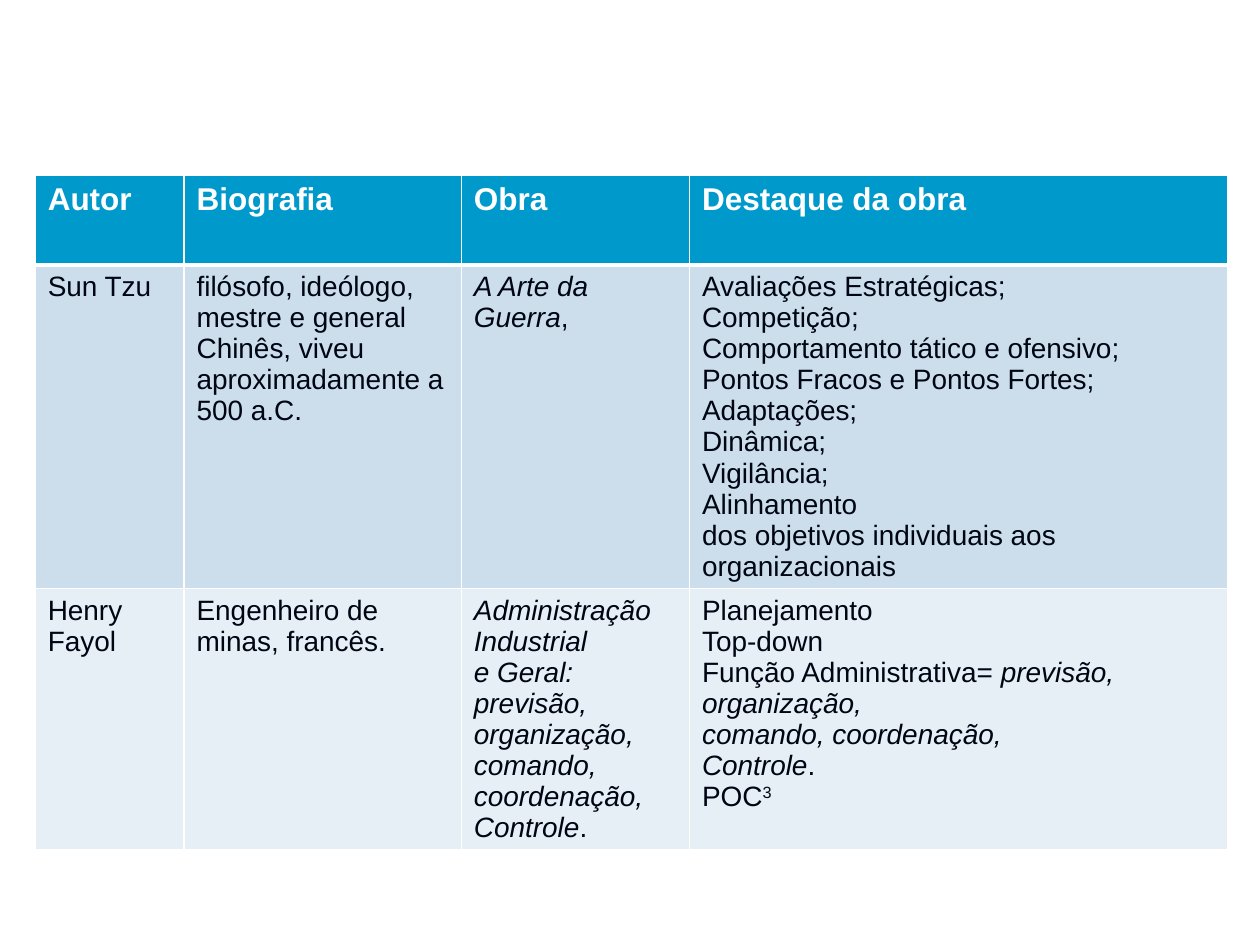
"""Builds a slide with a table of authors, their biographies and their works."""
from dataclasses import dataclass

import pptx
import pptx.dml.color
import pptx.oxml
import pptx.oxml.ns
import pptx.util

Cm = pptx.util.Cm
Pt = pptx.util.Pt
FONT = "Arial"
WHITE = "FFFFFF"
COLUMN_WIDTHS = [3.0, 5.59, 4.6, 10.86]


@dataclass(frozen=True)
class Span:
    text: str
    italic: bool = False
    baseline: int = 0


@dataclass(frozen=True)
class Row:
    height: float
    fill: str
    color: str
    size: int
    bold: bool
    bottom_border: int
    cells: list[list[list[Span]]]


def plain(*lines: str) -> list[list[Span]]:
    return [[Span(line)] for line in lines]


def italic(*lines: str) -> list[list[Span]]:
    return [[Span(line, italic=True)] for line in lines]


CONTROL_LINE = [Span("Controle", italic=True), Span(".")]
ROWS = [
    Row(1.8, "0099CC", WHITE, 18, True, 3, [
        plain("Autor"), plain("Biografia"), plain("Obra"), plain("Destaque da obra"),
    ]),
    Row(6.5, "CCDEEC", "000514", 16, False, 1, [
        plain("Sun Tzu"),
        plain("filósofo, ideólogo, mestre e general Chinês, viveu",
              "aproximadamente a 500 a.C."),
        [[Span("A Arte da Guerra", italic=True), Span(",")]],
        plain("Avaliações Estratégicas;", "Competição;",
              "Comportamento tático e ofensivo;", "Pontos Fracos e Pontos Fortes;",
              "Adaptações;", "Dinâmica;", "Vigilância;", "Alinhamento",
              "dos objetivos individuais aos organizacionais"),
    ]),
    Row(5.25, "E7EFF6", "000514", 16, False, 1, [
        plain("Henry Fayol"),
        plain("Engenheiro de minas, francês."),
        [*italic("Administração Industrial", "e Geral: previsão, organização,",
                 "comando, coordenação,"), CONTROL_LINE],
        [*plain("Planejamento", "Top-down"),
         [Span("Função Administrativa= "), Span("previsão, organização,", italic=True)],
         *italic("comando, coordenação,"), CONTROL_LINE,
         [Span("POC"), Span("3", baseline=30000)]],
    ]),
]


def rgb(value: str) -> pptx.dml.color.RGBColor:
    return pptx.dml.color.RGBColor.from_string(value)


def set_borders(cell: pptx.table._Cell, top: int, bottom: int) -> None:
    properties = cell._tc.get_or_add_tcPr()
    widths = {"lnL": 1, "lnR": 1, "lnT": top, "lnB": bottom}
    for index, (tag, width) in enumerate(widths.items()):
        border = pptx.oxml.parse_xml(
            f'<a:{tag} {pptx.oxml.ns.nsdecls("a")} w="{Pt(width)}">'
            f'<a:solidFill><a:srgbClr val="{WHITE}"/></a:solidFill></a:{tag}>'
        )
        properties.insert(index, border)


def write_cell(cell: pptx.table._Cell, lines: list[list[Span]], row: Row) -> None:
    frame = cell.text_frame
    for number, line in enumerate(lines):
        para = frame.add_paragraph() if number else frame.paragraphs[0]
        for span in line:
            run = para.add_run()
            run.text = span.text
            run.font.name = FONT
            run.font.size = Pt(row.size)
            run.font.bold = row.bold
            run.font.italic = span.italic
            run.font.color.rgb = rgb(row.color)
            if span.baseline:
                run.font._element.set("baseline", str(span.baseline))


def draw_table(page: pptx.slide.Slide, rows: list[Row]) -> None:
    table = page.shapes.add_table(
        len(rows), len(COLUMN_WIDTHS), Cm(0.71), Cm(3.54),
        Cm(sum(COLUMN_WIDTHS)), Cm(sum(row.height for row in rows)),
    ).table
    for column, width in zip(table.columns, COLUMN_WIDTHS):
        column.width = Cm(width)
    top_border = 1
    for number, row in enumerate(rows):
        table.rows[number].height = Cm(row.height)
        for cell, lines in zip(table.rows[number].cells, row.cells):
            cell.fill.solid()
            cell.fill.fore_color.rgb = rgb(row.fill)
            set_borders(cell, top_border, row.bottom_border)
            write_cell(cell, lines, row)
        top_border = row.bottom_border


def main() -> None:
    deck = pptx.Presentation()
    deck.slide_width, deck.slide_height = Cm(25.4), Cm(19.05)
    page = deck.slides.add_slide(deck.slide_layouts[6])
    draw_table(page, ROWS)
    deck.save("out.pptx")


if __name__ == "__main__":
    main()
